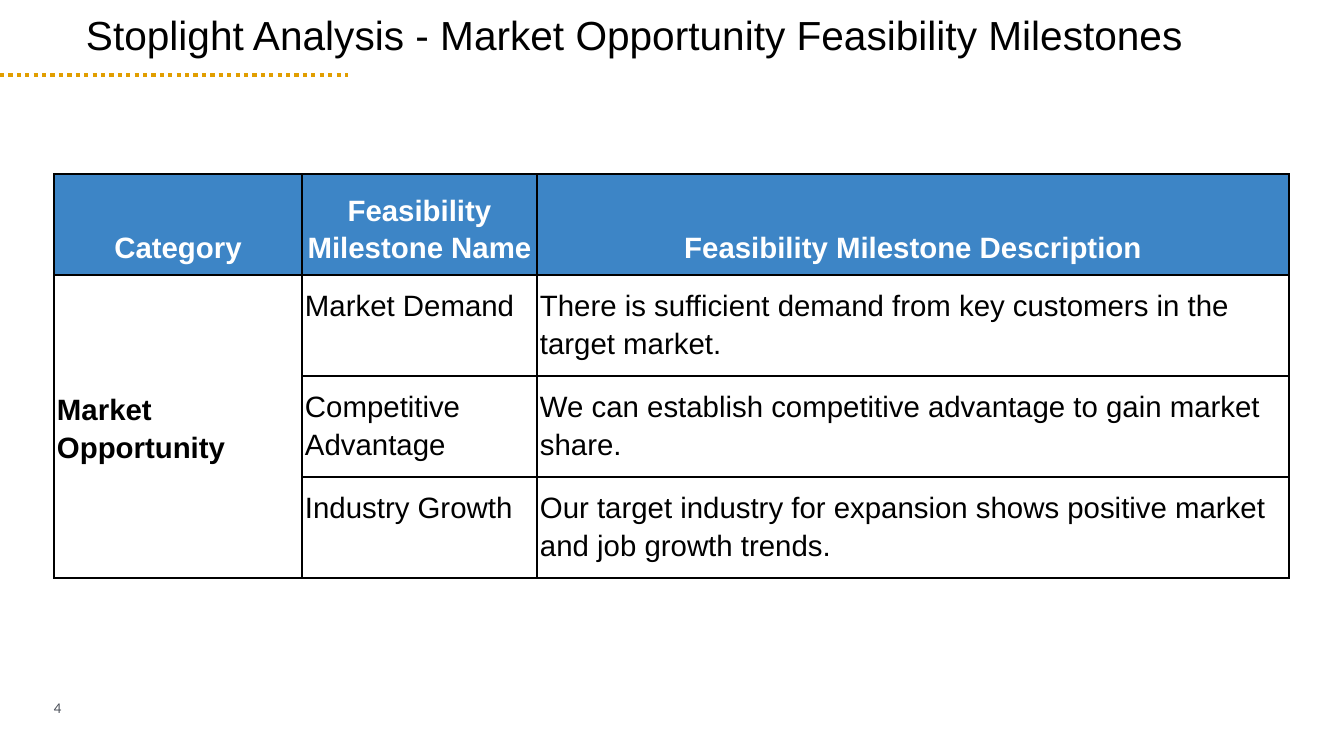
from lxml.etree import SubElement
from pptx import Presentation
from pptx.dml.color import RGBColor
from pptx.enum.dml import MSO_LINE
from pptx.enum.shapes import MSO_CONNECTOR
from pptx.enum.text import MSO_ANCHOR, PP_ALIGN
from pptx.oxml.ns import qn
from pptx.util import Pt

TITLE = "Stoplight Analysis - Market Opportunity Feasibility Milestones"
PAGE = "4"
HEADINGS = ["Category", "Feasibility Milestone Name", "Feasibility Milestone Description"]
CATEGORY = "Market Opportunity"
MILESTONES = [
    ("Market Demand", "There is sufficient demand from key customers in the target market."),
    ("Competitive Advantage", "We can establish competitive advantage to gain market share."),
    ("Industry Growth", "Our target industry for expansion shows positive market and job growth trends."),
]
COLORS = {"black": "000000", "white": "FFFFFF", "header": "3D85C6",
          "dots": "E19E00", "page": "474C55"}
COLUMN_WIDTHS = [248, 235, 752]
ROW_HEIGHT = 101


def px(length):
    return round(length * 914400 / 100.8)


def rgb(name):
    return RGBColor.from_string(COLORS[name])


def write(frame, text, size, color, font="Arial", bold=False, spacing=1.0, align=PP_ALIGN.LEFT):
    frame.word_wrap = True
    paragraph = frame.paragraphs[0]
    paragraph.alignment = align
    paragraph.line_spacing = spacing
    run = paragraph.add_run()
    run.text = text
    run.font.name = font
    run.font.size = Pt(size)
    run.font.bold = bold
    run.font.color.rgb = rgb(color)


def add_label(slide, box, text, size, color, anchor, **style):
    frame = slide.shapes.add_textbox(*map(px, box)).text_frame
    frame.margin_left = frame.margin_right = frame.margin_top = frame.margin_bottom = 0
    frame.vertical_anchor = anchor
    write(frame, text, size, color, **style)


def add_borders(cell):
    properties = cell._tc.get_or_add_tcPr()
    for side in ("a:lnL", "a:lnR", "a:lnT", "a:lnB"):
        border = SubElement(properties, qn(side), w=str(Pt(1.5)))
        SubElement(SubElement(border, qn("a:solidFill")), qn("a:srgbClr"), val=COLORS["black"])


def fill_cell(cell, text, anchor=MSO_ANCHOR.TOP, color="black", **style):
    cell.margin_left = cell.margin_right = px(3)
    cell.margin_top = cell.margin_bottom = px(10)
    cell.vertical_anchor = anchor
    write(cell.text_frame, text, 21, color, spacing=1.15, **style)


def add_milestones(slide):
    row_count = len(MILESTONES) + 1
    table = slide.shapes.add_table(
        row_count, len(HEADINGS), px(54), px(174),
        px(sum(COLUMN_WIDTHS)), px(ROW_HEIGHT * row_count)).table
    table.horz_banding = False
    for column, width in zip(table.columns, COLUMN_WIDTHS):
        column.width = px(width)
    for row in table.rows:
        row.height = px(ROW_HEIGHT)
    for cell in table.iter_cells():
        add_borders(cell)
        cell.fill.background()

    for column, heading in enumerate(HEADINGS):
        cell = table.cell(0, column)
        cell.fill.solid()
        cell.fill.fore_color.rgb = rgb("header")
        fill_cell(cell, heading, MSO_ANCHOR.BOTTOM, "white", bold=True, align=PP_ALIGN.CENTER)

    category = table.cell(1, 0)
    category.merge(table.cell(row_count - 1, 0))
    fill_cell(category, CATEGORY, MSO_ANCHOR.MIDDLE, bold=True)
    for row, milestone in enumerate(MILESTONES, 1):
        for column, text in enumerate(milestone, 1):
            fill_cell(table.cell(row, column), text)


def add_dots(slide):
    dots = slide.shapes.add_connector(MSO_CONNECTOR.STRAIGHT, 0, px(75), px(348), px(75))
    dots.line.color.rgb = rgb("dots")
    dots.line.width = Pt(3)
    dots.line.dash_style = MSO_LINE.ROUND_DOT
    SubElement(dots._element.spPr, qn("a:effectLst"))


def main():
    deck = Presentation()
    deck.slide_width, deck.slide_height = px(1344), px(756)
    slide = deck.slides.add_slide(deck.slide_layouts[6])
    add_label(slide, (54, 700, 115, 16), PAGE, 9.5, "page", MSO_ANCHOR.MIDDLE, font="Lato")
    add_label(slide, (86, 15, 1172, 44), TITLE, 29, "black", MSO_ANCHOR.TOP, spacing=0.9)
    add_dots(slide)
    add_milestones(slide)
    deck.save("out.pptx")


if __name__ == "__main__":
    main()
